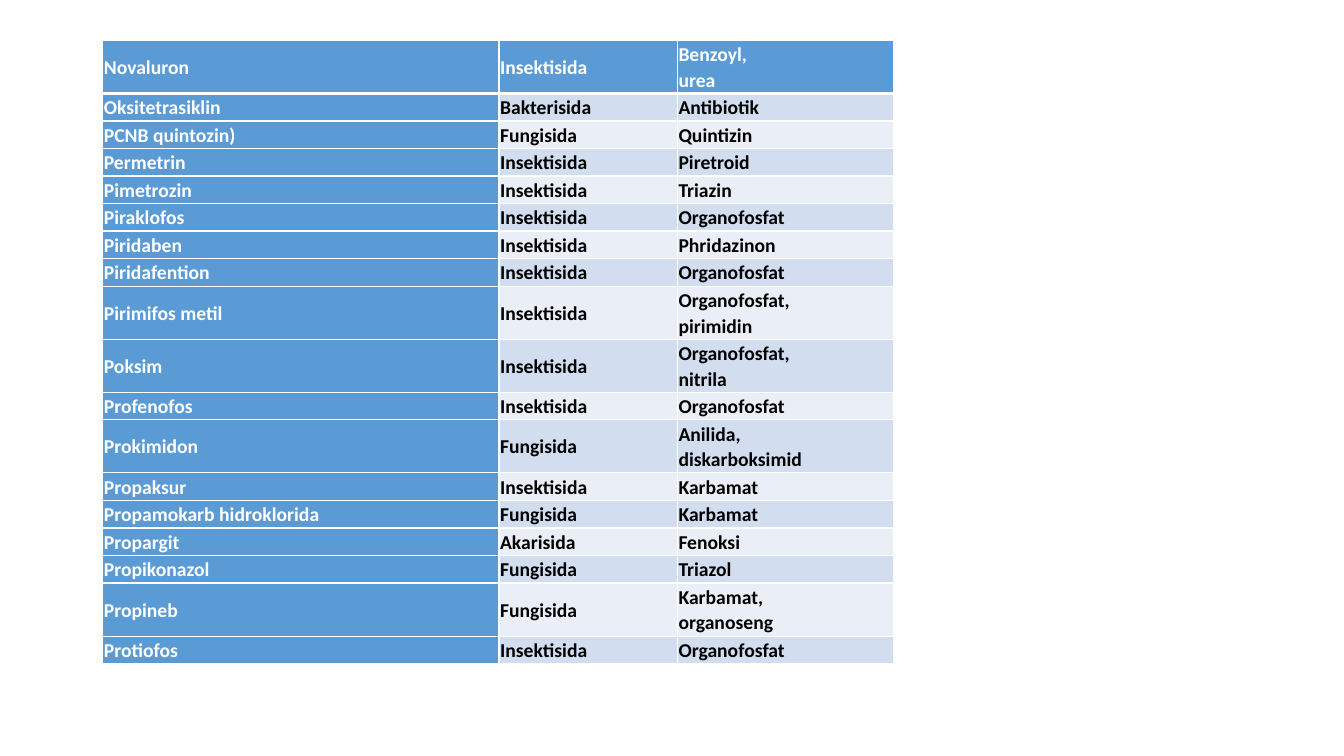
from dataclasses import dataclass

from lxml.etree import SubElement
from pptx import Presentation
from pptx.dml.color import RGBColor
from pptx.enum.text import MSO_ANCHOR
from pptx.oxml.ns import qn
from pptx.util import Inches, Pt

PESTICIDES = [
    ("Novaluron", "Insektisida", "Benzoyl,\nurea"),
    ("Oksitetrasiklin", "Bakterisida", "Antibiotik"),
    ("PCNB quintozin)", "Fungisida", "Quintizin"),
    ("Permetrin", "Insektisida", "Piretroid"),
    ("Pimetrozin", "Insektisida", "Triazin"),
    ("Piraklofos", "Insektisida", "Organofosfat"),
    ("Piridaben", "Insektisida", "Phridazinon"),
    ("Piridafention", "Insektisida", "Organofosfat"),
    ("Pirimifos metil", "Insektisida", "Organofosfat,\npirimidin"),
    ("Poksim", "Insektisida", "Organofosfat,\nnitrila"),
    ("Profenofos", "Insektisida", "Organofosfat"),
    ("Prokimidon", "Fungisida", "Anilida,\ndiskarboksimid"),
    ("Propaksur", "Insektisida", "Karbamat"),
    ("Propamokarb hidroklorida", "Fungisida", "Karbamat"),
    ("Propargit", "Akarisida", "Fenoksi"),
    ("Propikonazol", "Fungisida", "Triazol"),
    ("Propineb", "Fungisida", "Karbamat,\norganoseng"),
    ("Protiofos", "Insektisida", "Organofosfat"),
]
COLUMN_WIDTHS = (3.93, 1.77, 2.14)
LEFT, TOP, HEIGHT = 1.02, 0.4, 6.08
SINGLE_ROW, DOUBLE_ROW = 0.21, 0.4
INSET = 0.01


@dataclass(frozen=True)
class Theme:
    font: str = "Calibri"
    size: float = 14
    line_spacing: float = 1.07
    accent: str = "5B9BD5"
    bands: tuple = ("EAEFF7", "D2DEEF")
    light: str = "FFFFFF"
    dark: str = "000000"
    thin: float = 1
    thick: float = 3


THEME = Theme()


def set_borders(cell, row):
    """Draw white borders, with a thick line under the header row."""
    widths = {
        "L": THEME.thin,
        "R": THEME.thin,
        "T": THEME.thick if row == 1 else THEME.thin,
        "B": THEME.thick if row == 0 else THEME.thin,
    }
    properties = cell._tc.get_or_add_tcPr()
    for side, width in widths.items():
        line = SubElement(properties, qn(f"a:ln{side}"), w=str(Pt(width)))
        fill = SubElement(line, qn("a:solidFill"))
        SubElement(fill, qn("a:srgbClr"), val=THEME.light)


def write_text(cell, text, color):
    para = cell.text_frame.paragraphs[0]
    para.line_spacing = THEME.line_spacing
    for index, line in enumerate(text.split("\n")):
        if index:
            para.add_line_break()
        span = para.add_run()
        span.text = line
        span.font.name = THEME.font
        span.font.size = Pt(THEME.size)
        span.font.bold = True
        span.font.color.rgb = RGBColor.from_string(color)


def format_cell(cell, text, row, column):
    accented = row == 0 or column == 0
    cell.vertical_anchor = MSO_ANCHOR.MIDDLE
    cell.margin_left = cell.margin_right = Inches(INSET)
    cell.margin_top = cell.margin_bottom = Inches(INSET)
    set_borders(cell, row)
    cell.fill.solid()
    fill_color = THEME.accent if accented else THEME.bands[row % 2]
    cell.fill.fore_color.rgb = RGBColor.from_string(fill_color)
    write_text(cell, text, THEME.light if accented else THEME.dark)


def add_pesticide_table(page):
    frame = page.shapes.add_table(
        len(PESTICIDES), len(COLUMN_WIDTHS), Inches(LEFT), Inches(TOP),
        Inches(sum(COLUMN_WIDTHS)), Inches(HEIGHT))
    table = frame.table
    table.first_col = True
    for column, width in zip(table.columns, COLUMN_WIDTHS):
        column.width = Inches(width)
    for row, entry in enumerate(PESTICIDES):
        wraps = any("\n" in text for text in entry)
        table.rows[row].height = Inches(DOUBLE_ROW if wraps else SINGLE_ROW)
        for column, text in enumerate(entry):
            format_cell(table.cell(row, column), text, row, column)
    frame.height = Inches(HEIGHT)


def main():
    deck = Presentation()
    deck.slide_width, deck.slide_height = Inches(13.33), Inches(7.5)
    page = deck.slides.add_slide(deck.slide_layouts[6])
    add_pesticide_table(page)
    deck.save("out.pptx")


if __name__ == "__main__":
    main()
